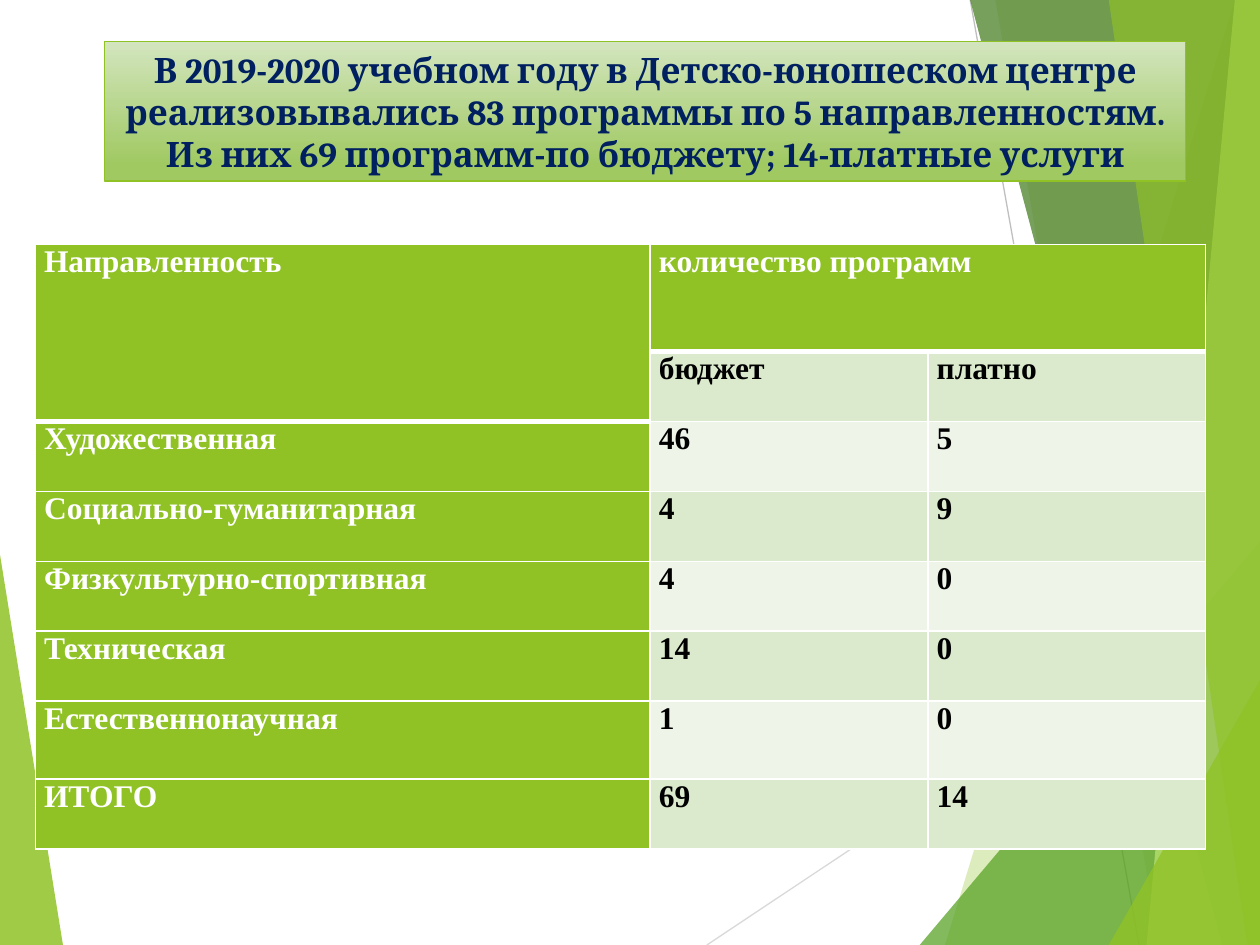
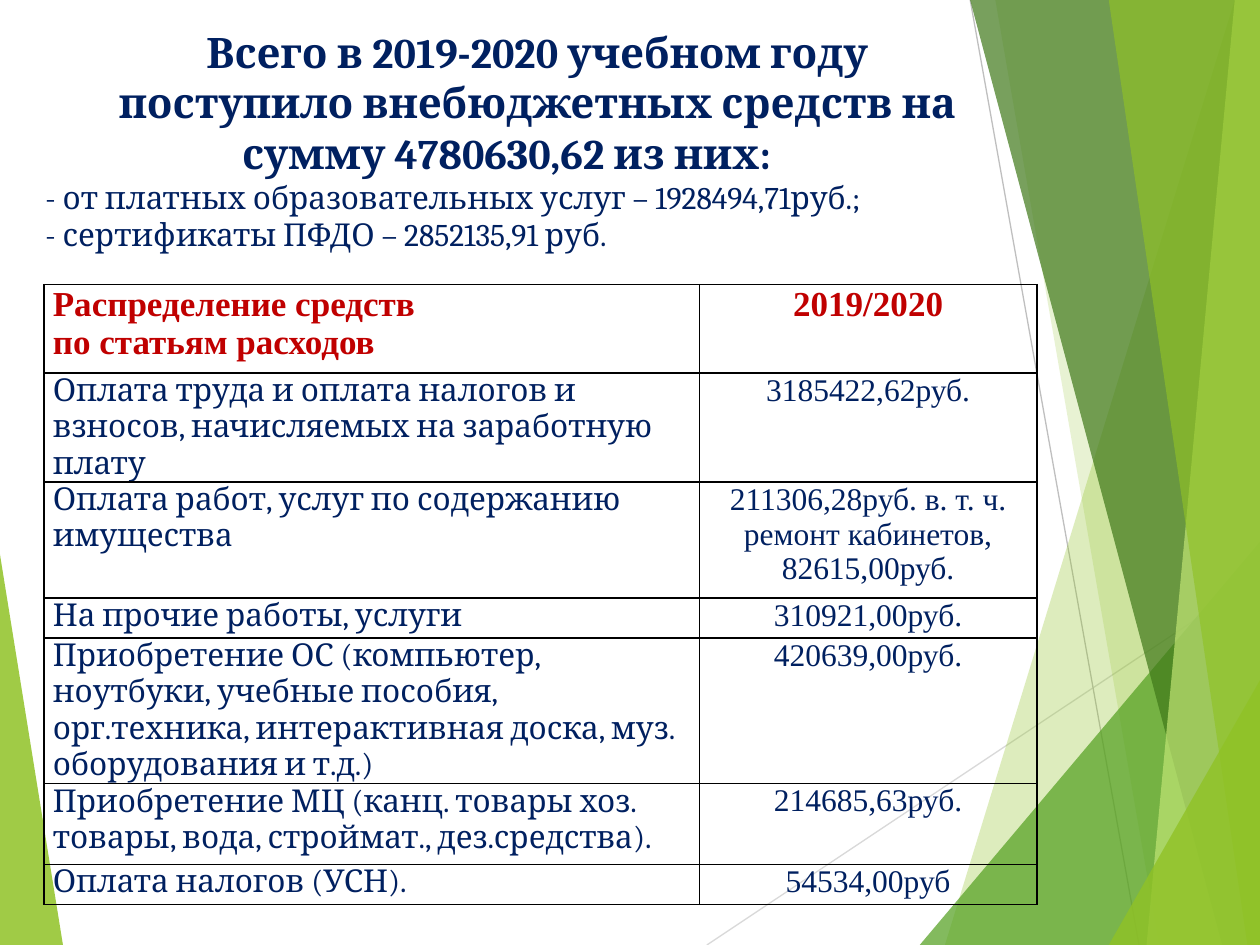
from lxml import etree
from pptx import Presentation
from pptx.dml.color import RGBColor
from pptx.enum.shapes import MSO_CONNECTOR
from pptx.enum.text import MSO_ANCHOR, MSO_AUTO_SIZE, PP_ALIGN
from pptx.oxml.ns import qn
from pptx.util import Inches, Pt

COLUMNS = 100  # the grid is 100 columns by 75 rows of equal squares

COLORS = {
    "leaf": "90C226", "grass": "54A021", "forest": "3F7819", "lime": "C0E474",
    "pale_line": "D9D9D9", "grey_line": "BFBFBF",
    "banner_top": "D3E5BE", "banner_bottom": "A0C962",
    "band_dark": "DBE9CD", "band_light": "EEF4E8",
    "navy": "002060", "red": "C00000", "white": "FFFFFF", "black": "000000",
}

SERIF, ROMAN = "Cambria", "Times New Roman"
LEFT, CENTER, JUSTIFY = PP_ALIGN.LEFT, PP_ALIGN.CENTER, PP_ALIGN.JUSTIFY


def text_style(name, size, bold, color, alignment, indent=0):
    return {"font": {"name": name, "size": Pt(size), "bold": bold},
            "color": color, "alignment": alignment, "indent": indent}


STYLES = {
    "banner": text_style(SERIF, 20, True, "navy", CENTER),
    "heading": text_style(SERIF, 24, True, "navy", CENTER, 4.9),
    "source": text_style(SERIF, 18, False, "navy", LEFT, 0.6),
    "direction": text_style(ROMAN, 18, True, "white", JUSTIFY),
    "count": text_style(ROMAN, 18, True, "black", JUSTIFY),
    "expense_head": text_style(ROMAN, 20, True, "red", JUSTIFY),
    "year_head": text_style(ROMAN, 20, True, "red", CENTER),
    "expense": text_style(SERIF, 18, False, "navy", LEFT),
    "amount": text_style(ROMAN, 18, False, "navy", CENTER),
}

LEFT_FACET = ("leaf", 85, [(-0.1, 43.9), (4.9, 75.1), (-0.1, 75)])
RAYS = [("pale_line", (56.1, 75), (100.1, 45.7)),
        ("grey_line", (77, 0), (90.4, 75))]
RIGHT_FACETS = [
    ("leaf", 30, [(97.5, 0), (75.4, 75), (100.2, 75.1), (100.1, 0.1)]),
    ("leaf", 20, [(78.8, -0.1), (91.9, 75), (100.1, 75), (100.1, -0.1)]),
    ("grass", 72, [(72.6, 75), (100, 42.9), (100.1, 75)]),
    ("forest", 70, [(76.7, -0.1), (97, 75), (100.1, 74.9), (100.1, -0.1)]),
    ("lime", 70, [(98.1, -0.1), (90.7, 75), (100.1, 75), (100, -0.1)]),
    ("leaf", 65, [(88.3, -0.1), (98.6, 75), (100, 75), (99.8, -0.1)]),
    ("leaf", 80, [(88.1, 75), (100.1, 53.5), (100.1, 74.9)]),
]

PROGRAMS = [
    ("Направленность", "количество программ", ""),
    ("", "бюджет", "платно"),
    ("Художественная", "46", "5"),
    ("Социально-гуманитарная", "4", "9"),
    ("Физкультурно-спортивная", "4", "0"),
    ("Техническая", "14", "0"),
    ("Естественнонаучная", "1", "0"),
    ("ИТОГО", "69", "14"),
]

EXPENSES = [
    ("Распределение средств\nпо статьям расходов", "2019/2020"),
    ("Оплата труда и оплата налогов и взносов, начисляемых на заработную плату",
     "3185422,62руб."),
    ("Оплата работ, услуг по содержанию имущества",
     "211306,28руб. в. т. ч. ремонт кабинетов, 82615,00руб."),
    ("На прочие работы, услуги", "310921,00руб."),
    ("Приобретение ОС (компьютер, ноутбуки, учебные пособия, орг.техника, "
     "интерактивная доска, муз. оборудования и т.д.)", "420639,00руб."),
    ("Приобретение МЦ (канц. товары хоз. товары, вода, строймат., дез.средства).",
     "214685,63руб."),
    ("Оплата налогов (УСН).", "54534,00руб"),
]


def set_attributes(target, values):
    for attribute, value in values.items():
        setattr(target, attribute, value)


def rgb(color):
    return RGBColor.from_string(COLORS[color])


class Deck:
    def __init__(self):
        self.presentation = Presentation()
        set_attributes(self.presentation, {"slide_width": Inches(10),
                                           "slide_height": Inches(7.5)})
        self.unit = self.presentation.slide_width // COLUMNS
        self.layout = self.presentation.slide_layouts[5]
        self.slide = None

    def grid(self, *cells):
        return [round(cell * self.unit) for cell in cells]

    def new_slide(self):
        self.slide = self.presentation.slides.add_slide(self.layout)

    def facet(self, color, opacity, corners):
        builder = self.slide.shapes.build_freeform(*corners[0], scale=self.unit)
        builder.add_line_segments(corners[1:], close=True)
        facet = builder.convert_to_shape()
        facet.shadow.inherit = False
        facet.fill.solid()
        facet.fill.fore_color.rgb = rgb(color)
        facet.line.fill.background()
        tint = facet._element.spPr.find(f"{qn('a:solidFill')}/{qn('a:srgbClr')}")
        etree.SubElement(tint, qn("a:alpha"), val=str(opacity * 1000))
        return facet

    def ray(self, color, start, end):
        ray = self.slide.shapes.add_connector(
            MSO_CONNECTOR.STRAIGHT, *self.grid(*start, *end))
        ray.line.color.rgb = rgb(color)
        ray.line.width = Pt(0.75)
        etree.SubElement(ray._element.spPr, qn("a:effectLst"))
        return ray

    def backdrop(self):
        """Draw the facets and move them to the layout, so every slide has them."""
        parts = [self.facet(*LEFT_FACET)]
        parts += [self.ray(*ray) for ray in RAYS]
        parts += [self.facet(*facet) for facet in RIGHT_FACETS]
        for number, part in enumerate(parts, start=100):
            part._element.xpath(".//p:cNvPr")[0].set("id", str(number))
            self.layout.shapes._spTree.append(part._element)

    def add_text(self, frame, lines):
        """Fill a text frame with (text, style name) paragraphs."""
        for number, (text, style_name) in enumerate(lines):
            style = STYLES[style_name]
            paragraph = frame.paragraphs[0] if number == 0 else frame.add_paragraph()
            paragraph.alignment = style["alignment"]
            if style["indent"]:
                properties = paragraph._p.get_or_add_pPr()
                properties.set("marL", "0")
                properties.set("indent", str(*self.grid(style["indent"])))
            run = paragraph.add_run()
            run.text = text
            set_attributes(run.font, style["font"])
            run.font.color.rgb = rgb(style["color"])

    def title(self, box, lines, anchor):
        title = self.slide.shapes.title
        set_attributes(title, dict(zip(("left", "top", "width", "height"),
                                       self.grid(*box))))
        set_attributes(title.text_frame, {"word_wrap": True,
                                          "auto_size": MSO_AUTO_SIZE.NONE,
                                          "vertical_anchor": anchor})
        self.add_text(title.text_frame, lines)
        return title

    def banner(self, box, lines):
        banner = self.title(box, lines, MSO_ANCHOR.MIDDLE)
        banner.fill.gradient()
        banner.fill.gradient_angle = 270
        stops = [("banner_top", 0), ("banner_bottom", 0.88)]
        for stop, (color, position) in zip(banner.fill.gradient_stops, stops):
            stop.color.rgb = rgb(color)
            stop.position = position
        banner.line.color.rgb = rgb("leaf")
        banner.line.width = Pt(1)

    def border(self, cell, side, color, width):
        line = etree.SubElement(cell._tc.get_or_add_tcPr(), qn(f"a:ln{side}"),
                                w=str(Pt(width)))
        fill = etree.SubElement(line, qn("a:solidFill"))
        etree.SubElement(fill, qn("a:srgbClr"), val=COLORS[color])

    def table(self, corner, widths, heights, rows, look, border, heavy=()):
        """look(row, column) gives a style name and a fill colour or None;
        heavy holds the cells with a thick lower edge."""
        table = self.slide.shapes.add_table(
            len(rows), len(widths),
            *self.grid(*corner, sum(widths), sum(heights))).table
        set_attributes(table, {"first_row": False, "horz_banding": False})
        for column, width in zip(table.columns, self.grid(*widths)):
            column.width = width
        for row, height in zip(table.rows, self.grid(*heights)):
            row.height = height
        for r, row in enumerate(rows):
            for c, text in enumerate(row):
                cell = table.cell(r, c)
                style_name, fill = look(r, c)
                set_attributes(cell, dict(zip(
                    ("margin_left", "margin_right", "margin_top", "margin_bottom"),
                    self.grid(0.7, 0.7, 0, 0))))
                edges = {"L": 1, "R": 1, "T": 3 if (r - 1, c) in heavy else 1,
                         "B": 3 if (r, c) in heavy else 1}
                for side, width in edges.items():
                    self.border(cell, side, border, width)
                if fill:
                    cell.fill.solid()
                    cell.fill.fore_color.rgb = rgb(fill)
                else:
                    cell.fill.background()
                if text:
                    self.add_text(cell.text_frame,
                                  [(line, style_name) for line in text.split("\n")])
        return table


def program_look(row, column):
    if row == 0 or column == 0:
        return "direction", "leaf"
    return "count", "band_dark" if row % 2 else "band_light"


def expense_look(row, column):
    names = ("expense", "amount") if row else ("expense_head", "year_head")
    return names[column], None


def programs_slide(deck):
    deck.banner((8.3, 3.3, 85.8, 11.1), [
        ("В 2019-2020 учебном году в Детско-юношеском центре "
         "реализовывались 83 программы по 5 направленностям.", "banner"),
        ("Из них 69 программ-по бюджету; 14-платные услуги", "banner")])
    table = deck.table((2.8, 19.4), (48.8, 22.05, 22.05),
                       [8.5] + [5.55] * 5 + [6.2, 5.55],
                       PROGRAMS, program_look, "white",
                       heavy={(0, 0), (0, 1), (0, 2), (1, 0)})
    table.cell(0, 0).merge(table.cell(1, 0))
    table.cell(0, 1).merge(table.cell(0, 2))


def funds_slide(deck):
    deck.title((2, 1.6, 76.4, 22.6), [
        ("Всего в 2019-2020 учебном году", "heading"),
        ("поступило внебюджетных средств на сумму 4780630,62 из них:", "heading"),
        ("- от платных образовательных услуг – 1928494,71руб.;", "source"),
        ("- сертификаты ПФДО – 2852135,91 руб.", "source")], MSO_ANCHOR.TOP)
    deck.table((3.5, 22.6), (52, 26.8), (7, 6.3, 9.2, 3.2, 7.3, 6.4, 3.2),
               EXPENSES, expense_look, "black")


def main():
    deck = Deck()
    deck.new_slide()
    deck.backdrop()
    programs_slide(deck)
    deck.new_slide()
    funds_slide(deck)
    deck.presentation.save("out.pptx")


if __name__ == "__main__":
    main()
